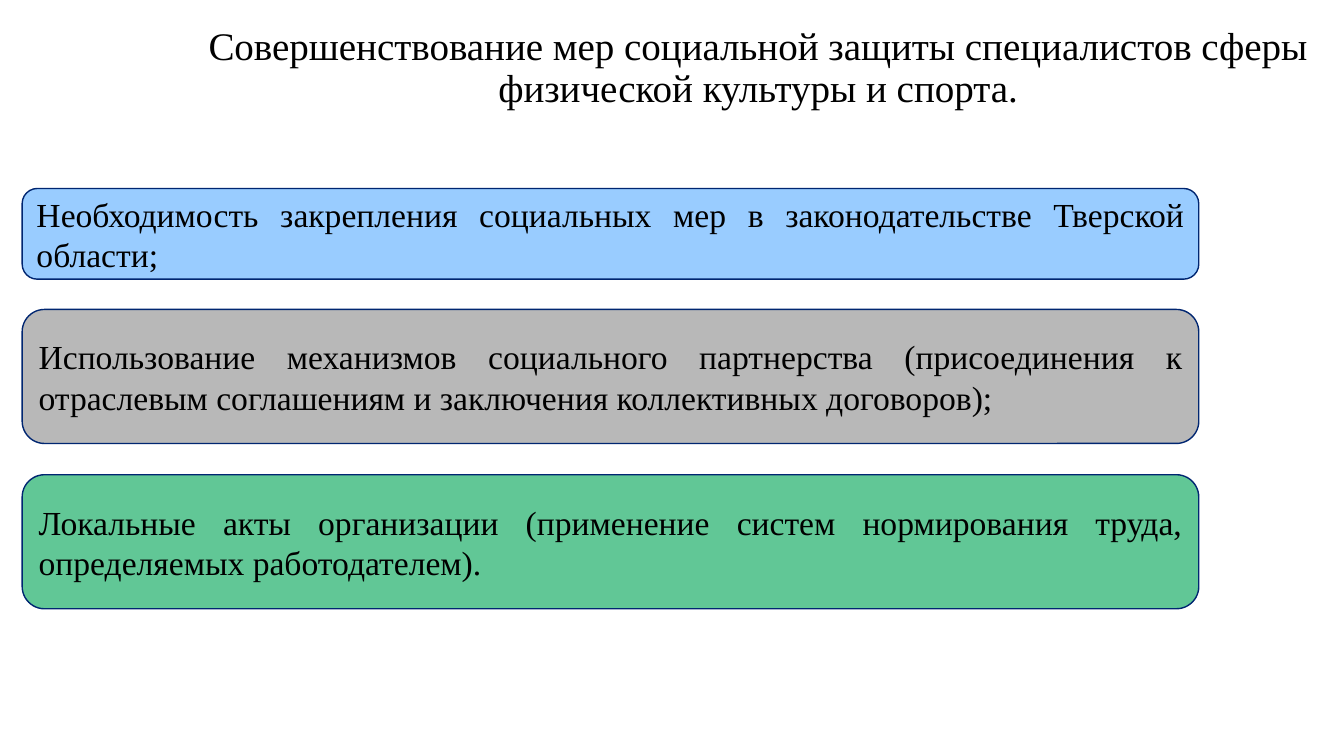
"""Build a slide on social protection measures for sports specialists."""
from dataclasses import dataclass

from pptx import Presentation
from pptx.dml.color import RGBColor
from pptx.enum.shapes import MSO_SHAPE
from pptx.enum.text import MSO_ANCHOR, PP_ALIGN
from pptx.slide import Slide
from pptx.util import Inches, Pt

ROUNDED = MSO_SHAPE.ROUNDED_RECTANGLE
MIDDLE = MSO_ANCHOR.MIDDLE
CENTER = PP_ALIGN.CENTER
JUSTIFY = PP_ALIGN.JUSTIFY

BLACK = RGBColor(0x00, 0x00, 0x00)
NAVY = RGBColor(0x00, 0x26, 0x71)
BLUE = RGBColor(0x99, 0xCC, 0xFF)
GRAY = RGBColor(0xB8, 0xB8, 0xB8)
GREEN = RGBColor(0x61, 0xC7, 0x96)

FONT = "Times New Roman"
TITLE = "Совершенствование мер социальной защиты специалистов сферы физической культуры и спорта."
TITLE_ONLY_LAYOUT = 5


@dataclass(frozen=True)
class Measure:
    text: str
    top: float
    height: float
    fill: RGBColor


MEASURES = [
    Measure("Необходимость закрепления социальных мер в законодательстве Тверской области;",
            1.87, 0.9, BLUE),
    Measure("Использование механизмов социального партнерства (присоединения к отраслевым "
            "соглашениям и заключения коллективных договоров);",
            3.07, 1.33, GRAY),
    Measure("Локальные акты организации (применение систем нормирования труда, "
            "определяемых работодателем).",
            4.71, 1.33, GREEN),
]


def write_text(box, text: str, size: float, alignment: PP_ALIGN) -> None:
    frame = box.text_frame
    frame.word_wrap = True
    frame.vertical_anchor = MIDDLE
    frame.text = text
    para = frame.paragraphs[0]
    para.alignment = alignment
    para.font.name = FONT
    para.font.size = Pt(size)
    para.font.color.rgb = BLACK


def add_title(page: Slide) -> None:
    title = page.shapes.title
    title.left, title.top = Inches(1.92), Inches(0)
    title.width, title.height = Inches(11.2), Inches(1.56)
    write_text(title, TITLE, 27.9, CENTER)
    title.text_frame.margin_bottom = Inches(0.25)
    title.text_frame.paragraphs[0].line_spacing = 0.9


def add_measure(page: Slide, measure: Measure) -> None:
    box = page.shapes.add_shape(ROUNDED, Inches(0.22), Inches(measure.top),
                                Inches(11.67), Inches(measure.height))
    box.shadow.inherit = False
    box.fill.solid()
    box.fill.fore_color.rgb = measure.fill
    box.line.color.rgb = NAVY
    box.line.width = Pt(1)
    write_text(box, measure.text, 24, JUSTIFY)


def main() -> None:
    deck = Presentation()
    deck.slide_width, deck.slide_height = Inches(13.33), Inches(7.5)
    page = deck.slides.add_slide(deck.slide_layouts[TITLE_ONLY_LAYOUT])
    add_title(page)
    for measure in MEASURES:
        add_measure(page, measure)
    deck.save("out.pptx")


if __name__ == "__main__":
    main()
